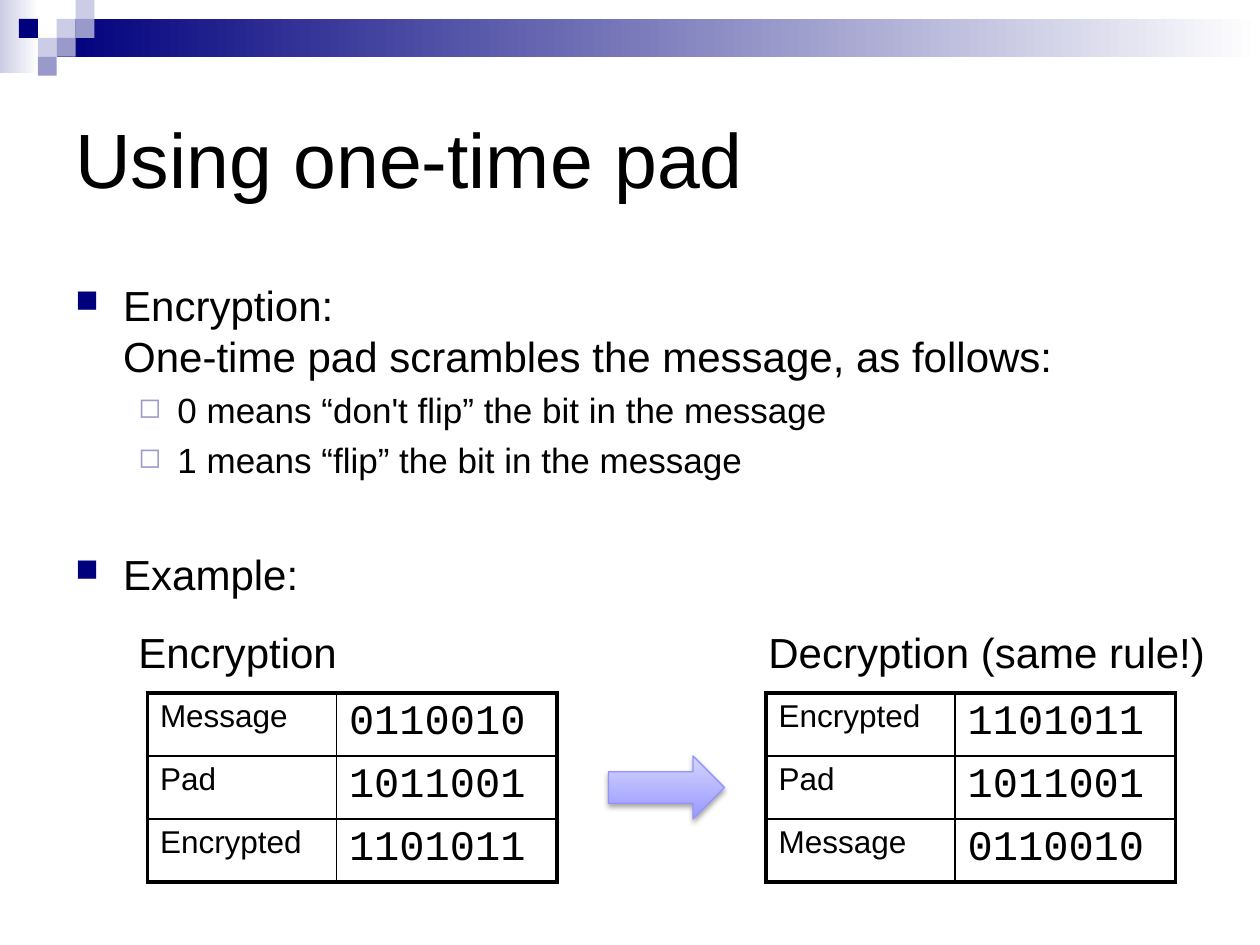
"""Build the slide that explains encryption and decryption with a one-time pad."""
import pptx
import pptx.dml.color
import pptx.enum.shapes
import pptx.enum.text
import pptx.oxml
import pptx.oxml.ns
import pptx.util
from pptx.util import Inches

RGBColor = pptx.dml.color.RGBColor
BLACK = RGBColor(0x00, 0x00, 0x00)
WHITE = RGBColor(0xFF, 0xFF, 0xFF)
NAVY = RGBColor(0x00, 0x00, 0x7D)
LAVENDER = RGBColor(0x99, 0x99, 0xCC)
PALE = RGBColor(0xCC, 0xCC, 0xE6)
ARROW_DARK = RGBColor(0x99, 0x99, 0xFF)
ARROW_LIGHT = RGBColor(0xD4, 0xD4, 0xFF)
ARROW_LINE = RGBColor(0x93, 0x93, 0xFC)

SQUARE = 0.15
SQUARES = [(3, 1, PALE), (4, 0, PALE), (4, 1, LAVENDER), (2, 2, PALE),
           (1, 1, NAVY), (3, 2, LAVENDER), (2, 3, LAVENDER)]

TOP_LEVEL = {"size": 24, "margin": 0.38, "indent": -0.38,
             "bullet": "■", "color": NAVY, "percent": 75}
SUB_LEVEL = {"size": 20, "margin": 0.81, "indent": -0.31,
             "bullet": "◻", "color": LAVENDER, "percent": 80}
BODY = [
    ("Encryption: \vOne-time pad scrambles the message, as follows:", TOP_LEVEL, 5.5),
    ("0 means “don't flip” the bit in the message", SUB_LEVEL, 4.6),
    ("1 means “flip” the bit in the message", SUB_LEVEL, 4.6),
    ("Example:", TOP_LEVEL, 39),
]

MESSAGE = ("Message", "0110010")
PAD = ("Pad", "1011001")
ENCRYPTED = ("Encrypted", "1101011")
COLUMN_WIDTHS = (1.5, 1.75)
ROW_HEIGHT = 0.48
THICK, THIN = 2.25, 1


def drawing_element(xml):
    """Parse a fragment of DrawingML whose prefix is a."""
    declaration = pptx.oxml.ns.nsdecls("a")
    tag, rest = xml.split(" ", 1)
    return pptx.oxml.parse_xml(f"{tag} {declaration} {rest}")


def format_text(paragraph, size, name="Arial"):
    """Set the font of a paragraph's runs."""
    formats = {"size": pptx.util.Pt(size), "name": name}
    for run in paragraph.runs:
        for attribute, value in formats.items():
            setattr(run.font, attribute, value)
        run.font.color.rgb = BLACK


def fill_gradient(shape, colors, angle):
    """Fill a shape with a two-colour linear gradient."""
    shape.fill.gradient()
    shape.fill.gradient_angle = angle
    for stop, color in zip(shape.fill.gradient_stops, colors):
        stop.color.rgb = color


def add_rectangle(slide, left, top, width, height):
    """Add a rectangle without line or shadow."""
    shape = slide.shapes.add_shape(
        pptx.enum.shapes.MSO_SHAPE.RECTANGLE,
        Inches(left), Inches(top), Inches(width), Inches(height))
    shape.line.fill.background()
    shape.shadow.inherit = False
    return shape


def add_banner(slide):
    """Add the gradient bands and the squares along the top edge."""
    fill_gradient(add_rectangle(slide, 0, 0, 0.31, 0.58), (PALE, WHITE), 0)
    fill_gradient(add_rectangle(slide, 0.45, 0.15, 9.55, 0.3), (NAVY, WHITE), 0)
    for column, row, color in SQUARES:
        square = add_rectangle(slide, column * SQUARE, row * SQUARE, SQUARE, SQUARE)
        square.fill.solid()
        square.fill.fore_color.rgb = color


def add_text(slide, text, left, top, width, height, size, wrap=True):
    """Add a text box with one paragraph and return its text frame."""
    box = slide.shapes.add_textbox(
        Inches(left), Inches(top), Inches(width), Inches(height))
    frame = box.text_frame
    frame.word_wrap = wrap
    frame.text = text
    format_text(frame.paragraphs[0], size)
    return frame


def add_bullet(paragraph, level):
    """Give a paragraph the indent and bullet of its level."""
    properties = paragraph._p.get_or_add_pPr()
    properties.set("marL", str(Inches(level["margin"])))
    properties.set("indent", str(Inches(level["indent"])))
    for xml in (
            f'<a:buClr ><a:srgbClr val="{level["color"]}"/></a:buClr>',
            f'<a:buSzPct val="{level["percent"] * 1000}"/>',
            f'<a:buChar char="{level["bullet"]}"/>'):
        properties.append(drawing_element(xml))


def add_body(slide):
    """Add the bulleted explanation."""
    box = slide.shapes.add_textbox(Inches(0.5), Inches(2.17), Inches(9), Inches(4.25))
    frame = box.text_frame
    frame.word_wrap = True
    for index, (text, level, space) in enumerate(BODY):
        paragraph = frame.add_paragraph() if index else frame.paragraphs[0]
        paragraph.text = text
        paragraph.level = int(level is SUB_LEVEL)
        paragraph.space_before = pptx.util.Pt(space)
        format_text(paragraph, level["size"])
        add_bullet(paragraph, level)


def set_borders(cell, widths):
    """Draw the black borders of a cell, with widths in points by side."""
    properties = cell._tc.get_or_add_tcPr()
    for side, width in widths.items():
        properties.append(drawing_element(
            f'<a:ln{side} w="{pptx.util.Pt(width)}"><a:solidFill>'
            f'<a:srgbClr val="{BLACK}"/></a:solidFill></a:ln{side}>'))


def add_bit_table(slide, left, rows):
    """Add a table of labelled bit strings with a thick outer frame."""
    table = slide.shapes.add_table(
        len(rows), len(COLUMN_WIDTHS), Inches(left), Inches(5.5),
        Inches(sum(COLUMN_WIDTHS)), Inches(ROW_HEIGHT * len(rows))).table
    table.first_row = False
    table.horz_banding = False
    for column, width in zip(table.columns, COLUMN_WIDTHS):
        column.width = Inches(width)
    last = len(rows) - 1
    for row_index, values in enumerate(rows):
        for column_index, value in enumerate(values):
            cell = table.cell(row_index, column_index)
            cell.text = value
            size, name = ((18, "Arial"), (24, "Courier New"))[column_index]
            format_text(cell.text_frame.paragraphs[0], size, name)
            set_borders(cell, {
                "L": THIN if column_index else THICK,
                "R": THICK if column_index else THIN,
                "T": THIN if row_index else THICK,
                "B": THICK if row_index == last else THIN})
            cell.fill.background()


def add_arrow(slide):
    """Add the shaded arrow between the two tables."""
    arrow = slide.shapes.add_shape(
        pptx.enum.shapes.MSO_SHAPE.RIGHT_ARROW,
        Inches(4.83), Inches(6), Inches(0.92), Inches(0.5))
    fill_gradient(arrow, (ARROW_DARK, ARROW_LIGHT), 90)
    arrow.line.color.rgb = ARROW_LINE
    arrow.line.width = pptx.util.Pt(0.75)
    arrow.shadow.inherit = False
    effects = arrow._element.spPr.find(pptx.oxml.ns.qn("a:effectLst"))
    effects.append(drawing_element(
        '<a:outerShdw blurRad="40000" dist="23000" dir="5400000" rotWithShape="0">'
        f'<a:srgbClr val="{BLACK}"><a:alpha val="35000"/></a:srgbClr></a:outerShdw>'))


def main():
    """Create the presentation and save it."""
    presentation = pptx.Presentation()
    presentation.slide_width = Inches(10)
    presentation.slide_height = Inches(7.5)
    slide = presentation.slides.add_slide(presentation.slide_layouts[6])
    add_banner(slide)
    title = add_text(slide, "Using one-time pad", 0.5, 0.5, 9, 1.5, 44)
    title.vertical_anchor = pptx.enum.text.MSO_ANCHOR.MIDDLE
    add_body(slide)
    add_bit_table(slide, 1.17, (MESSAGE, PAD, ENCRYPTED))
    add_bit_table(slide, 6.08, (ENCRYPTED, PAD, MESSAGE))
    add_text(slide, "Encryption", 1, 4.92, 1.78, 0.5, 24, wrap=False)
    add_text(slide, "Decryption (same rule!)", 6, 4.92, 3.7, 0.5, 24, wrap=False)
    add_arrow(slide)
    presentation.save("out.pptx")


if __name__ == "__main__":
    main()
